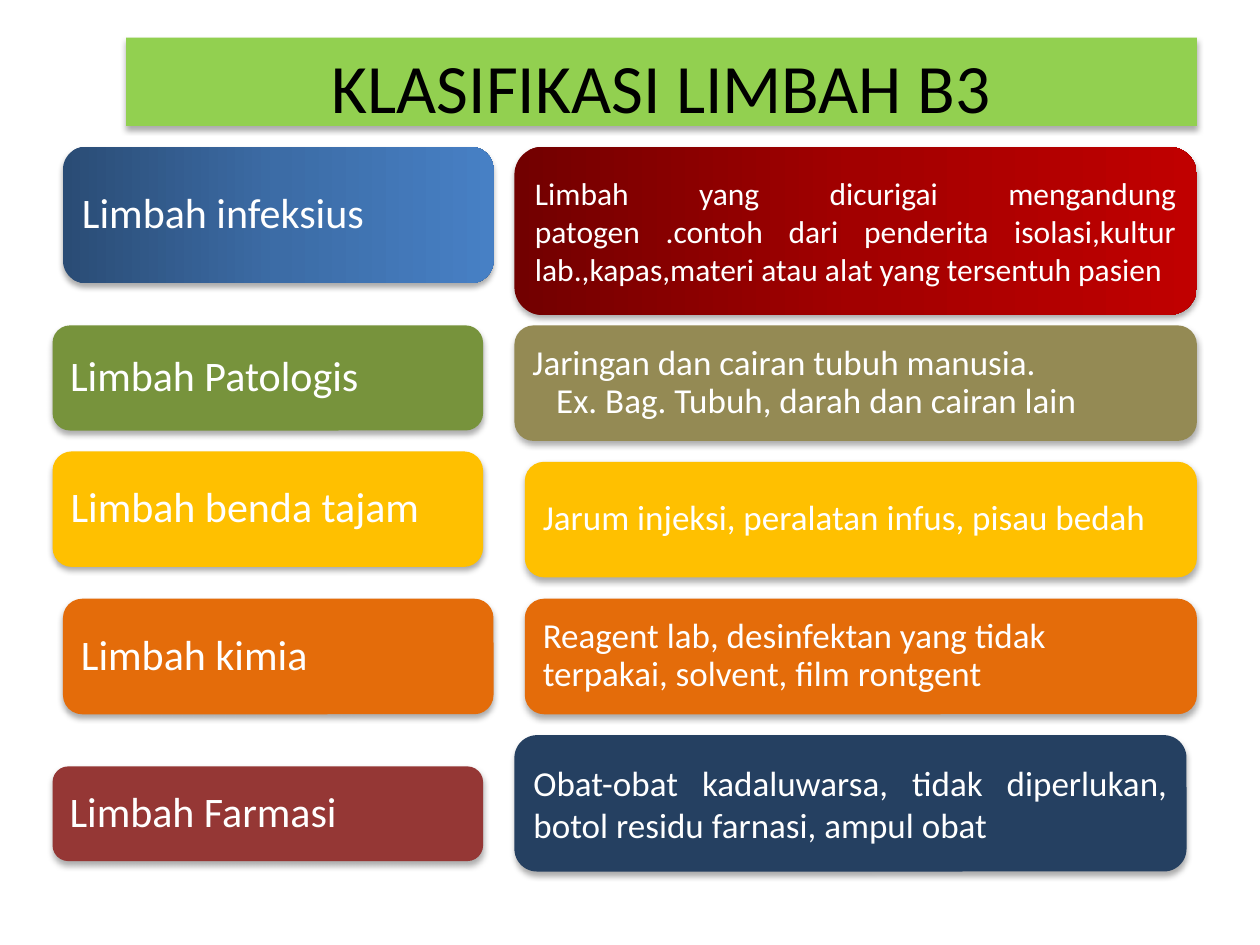
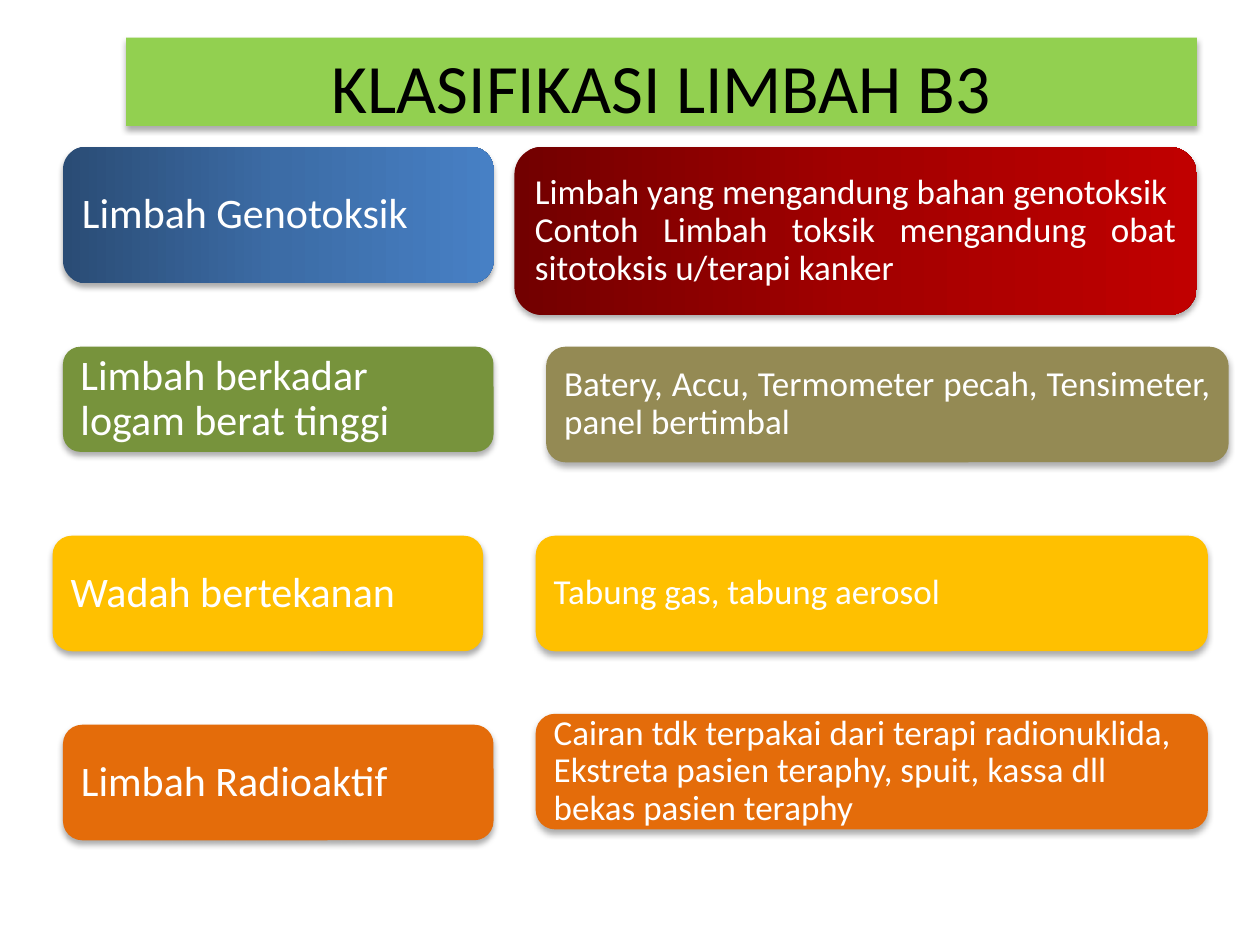
from dataclasses import dataclass

from lxml import etree
from pptx import Presentation
from pptx import util as u
from pptx.dml.color import RGBColor
from pptx.enum import shapes, text
from pptx.oxml.ns import qn

FONT = "Calibri"
WHITE, BLACK = "FFFFFF", "000000"
TITLE_GREEN = "92D050"
GREEN, OLIVE, YELLOW, ORANGE = "77933C", "948A54", "FFC000", "E46C0A"
MAROON, NAVY = "953735", "254061"
BLUE_FADE = ("2A4C75", "3C6CA6", "4780C5")
RED_FADE = ("720000", "A20000", "C00000")
CATEGORY_WIDTH = 8.68
WIDE, NARROW = 13.76, 13.55
BOX_HEIGHT = 2.33
EXAMPLE_INDENT = 0.48

Fill = str | tuple[str, ...]


@dataclass
class Category:
    """Name of a waste class; lengths in centimetres."""
    name: str
    fill: Fill
    left: float
    top: float
    height: float = BOX_HEIGHT


@dataclass
class Explanation:
    """What a waste class covers; lengths in centimetres."""
    lines: tuple[str, ...]
    fill: Fill
    left: float
    top: float
    width: float = NARROW
    height: float = BOX_HEIGHT
    size: int = 20
    justified: bool = False
    spacing: float = 0.9
    indents: tuple[float, ...] = ()


TITLE = "KLASIFIKASI LIMBAH B3"
SLIDES = [
    [
        (Category("Limbah infeksius", BLUE_FADE, 1.27, 2.96, 2.75),
         Explanation(("Limbah yang dicurigai mengandung patogen .contoh dari penderita "
                      "isolasi,kultur lab.,kapas,materi atau alat yang tersentuh pasien",),
                     RED_FADE, 10.37, 2.96, WIDE, 3.39, size=18, justified=True, spacing=1.0)),
        (Category("Limbah Patologis", GREEN, 1.06, 6.56, 2.12),
         Explanation(("Jaringan dan cairan tubuh manusia.",
                      "Ex. Bag. Tubuh, darah dan cairan lain"),
                     OLIVE, 10.37, 6.56, WIDE, justified=True, indents=(0, EXAMPLE_INDENT))),
        (Category("Limbah benda tajam", YELLOW, 1.06, 9.1),
         Explanation(("Jarum injeksi, peralatan infus, pisau bedah",), YELLOW, 10.58, 9.31)),
        (Category("Limbah kimia", ORANGE, 1.27, 12.07),
         Explanation(("Reagent lab, desinfektan yang tidak terpakai, solvent, film rontgent",),
                     ORANGE, 10.58, 12.07)),
        (Category("Limbah Farmasi", MAROON, 1.06, 15.45, 1.91),
         Explanation(("Obat-obat kadaluwarsa, tidak diperlukan, botol residu farnasi, "
                      "ampul obat",),
                     NAVY, 10.37, 14.82, height=2.75, justified=True, spacing=1.0)),
    ],
    [
        (Category("Limbah Genotoksik", BLUE_FADE, 1.27, 2.96, 2.75),
         Explanation(("Limbah yang mengandung bahan genotoksik",
                      "Contoh Limbah toksik mengandung obat sitotoksis u/terapi kanker"),
                     RED_FADE, 10.37, 2.96, WIDE, 3.39, justified=True)),
        (Category("Limbah berkadar logam berat tinggi", GREEN, 1.27, 6.99, 2.12),
         Explanation(("Batery, Accu, Termometer pecah, Tensimeter, panel bertimbal",),
                     OLIVE, 11.01, 6.99, WIDE, justified=True)),
        (Category("Wadah bertekanan", YELLOW, 1.06, 10.8),
         Explanation(("Tabung gas, tabung aerosol",), YELLOW, 10.8, 10.8)),
        (Category("Limbah Radioaktif", ORANGE, 1.27, 14.61),
         Explanation(("Cairan tdk terpakai dari terapi radionuklida, Ekstreta pasien teraphy, "
                      "spuit, kassa dll bekas pasien teraphy",), ORANGE, 10.8, 14.39)),
    ],
]


def rgb(colour: str) -> RGBColor:
    return RGBColor.from_string(colour)


def add_colour(parent, colour: str):
    return etree.SubElement(parent, qn("a:srgbClr"), val=colour)


def paint(shape, fill: Fill) -> None:
    """Fill flat or left to right, without outline, over a soft shadow."""
    if isinstance(fill, str):
        shape.fill.solid()
        shape.fill.fore_color.rgb = rgb(fill)
    else:
        shape.fill.gradient()
        shape.fill.gradient_angle = 0
        stops = shape._element.spPr.find(".//" + qn("a:gsLst"))
        for stop in list(stops):
            stops.remove(stop)
        for i, colour in enumerate(fill):
            position = 100000 * i // (len(fill) - 1)
            add_colour(etree.SubElement(stops, qn("a:gs"), pos=str(position)), colour)
    shape.line.fill.background()
    shape.shadow.inherit = False
    effects = shape._element.spPr.find(qn("a:effectLst"))
    shadow = etree.SubElement(effects, qn("a:outerShdw"), blurRad=str(u.Pt(3.5)),
                              dist=str(u.Pt(2.2)), dir="5400000", rotWithShape="0")
    etree.SubElement(add_colour(shadow, BLACK), qn("a:alpha"), val="32000")


def write(paragraph, words: str, size: float, colour: str, alignment, spacing: float) -> None:
    paragraph.alignment = alignment
    paragraph.line_spacing = spacing
    run = paragraph.add_run()
    run.text = words
    run.font.name = FONT
    run.font.size = u.Pt(size)
    run.font.color.rgb = rgb(colour)


def add_title(slide) -> None:
    title = slide.shapes.title
    title.left, title.top, title.width, title.height = map(u.Cm, (2.54, 0.76, 21.59, 1.78))
    paint(title, TITLE_GREEN)
    frame = title.text_frame
    frame.word_wrap = True
    frame.auto_size = text.MSO_AUTO_SIZE.NONE
    frame.vertical_anchor = text.MSO_ANCHOR.TOP
    write(frame.paragraphs[0], TITLE, 39.6, BLACK, text.PP_ALIGN.CENTER, 1.0)


def add_box(slide, box: Explanation) -> None:
    shape = slide.shapes.add_shape(
        shapes.MSO_SHAPE.ROUNDED_RECTANGLE,
        *map(u.Cm, (box.left, box.top, box.width, box.height)))
    paint(shape, box.fill)
    frame = shape.text_frame
    frame.word_wrap = True
    frame.vertical_anchor = text.MSO_ANCHOR.MIDDLE
    alignment = text.PP_ALIGN.JUSTIFY if box.justified else text.PP_ALIGN.LEFT
    for i, line in enumerate(box.lines):
        paragraph = frame.add_paragraph() if i else frame.paragraphs[0]
        if box.indents:
            paragraph._p.get_or_add_pPr().set("marL", str(u.Cm(box.indents[i])))
        write(paragraph, line, box.size, WHITE, alignment, box.spacing)


def add_category(slide, category: Category) -> None:
    add_box(slide, Explanation((category.name,), category.fill, category.left, category.top,
                               CATEGORY_WIDTH, category.height, size=24))


def main() -> None:
    deck = Presentation()
    deck.slide_width, deck.slide_height = u.Cm(25.4), u.Cm(19.05)
    title_only = deck.slide_layouts[5]
    for rows in SLIDES:
        slide = deck.slides.add_slide(title_only)
        add_title(slide)
        for category, explanation in rows:
            add_category(slide, category)
            add_box(slide, explanation)
    deck.save("out.pptx")


if __name__ == "__main__":
    main()
